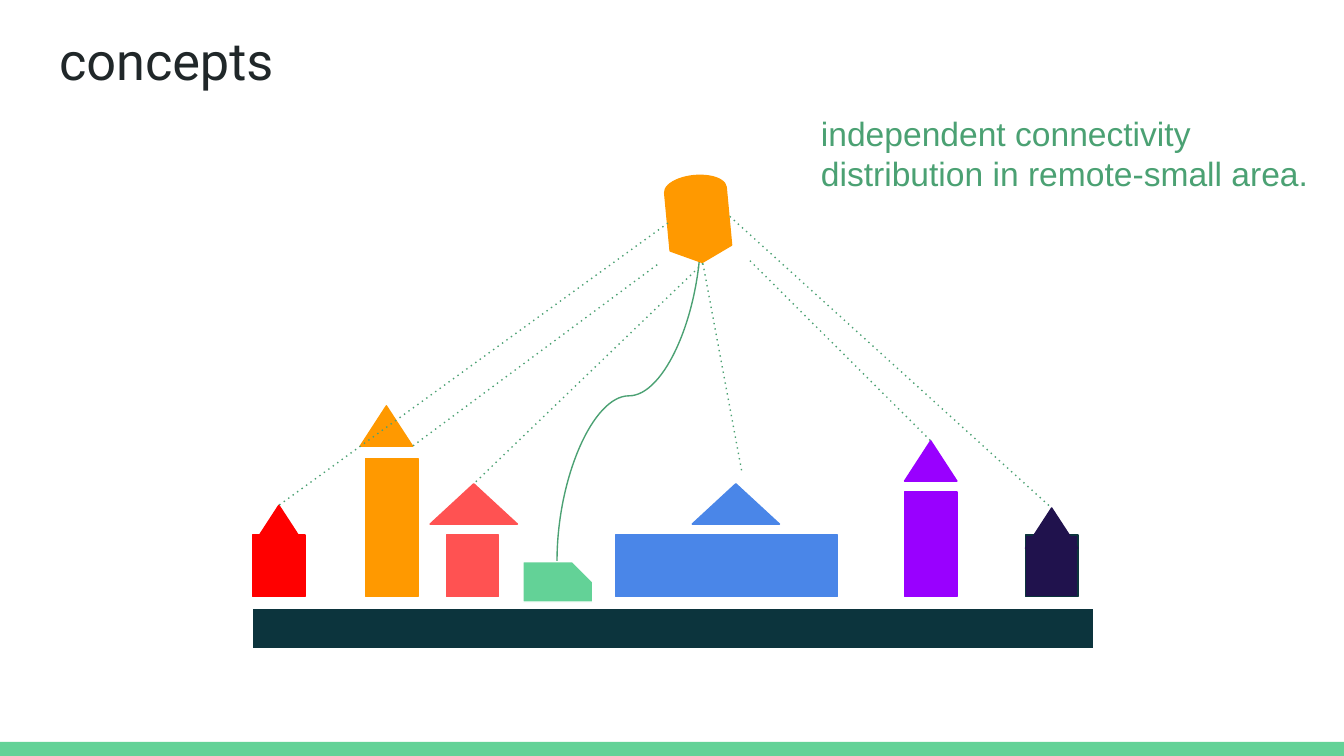
from lxml.etree import SubElement
from pptx import Presentation
from pptx.dml.color import RGBColor
from pptx.enum.shapes import MSO_CONNECTOR as LINK, MSO_SHAPE as SHAPE
from pptx.enum.text import MSO_ANCHOR, PP_ALIGN
from pptx.oxml.ns import qn
from pptx.util import Inches, Pt

WHITE = RGBColor(0xFF, 0xFF, 0xFF)
INK = RGBColor(0x20, 0x27, 0x29)
MINT = RGBColor(0x63, 0xD2, 0x97)
GREEN = RGBColor(0x4B, 0xA1, 0x73)
TEAL = RGBColor(0x0C, 0x34, 0x3D)
CORAL = RGBColor(0xFF, 0x52, 0x52)
ORANGE = RGBColor(0xFF, 0x99, 0x00)
BLUE = RGBColor(0x4A, 0x86, 0xE8)
NAVY = RGBColor(0x20, 0x12, 0x4D)
PURPLE = RGBColor(0x99, 0x00, 0xFF)
RED = RGBColor(0xFF, 0x00, 0x00)

deck = Presentation()
deck.slide_width = Inches(10)
deck.slide_height = deck.slide_width * 9 // 16
COL = deck.slide_width // 1000
ROW = COL
page = deck.slides.add_slide(deck.slide_layouts[5])


def draw(kind, left, top, width, height, fill, outline=None):
    shape = page.shapes.add_shape(kind, left * COL, top * ROW, width * COL, height * ROW)
    shape.shadow.inherit = False
    shape.fill.solid()
    shape.fill.fore_color.rgb = fill
    if outline is None:
        shape.line.fill.background()
    else:
        shape.line.color.rgb = outline
        shape.line.width = Pt(0.75)
    return shape


def link(kind, x1, y1, x2, y2):
    connector = page.shapes.add_connector(kind, x1 * COL, y1 * ROW, x2 * COL, y2 * ROW)
    connector.line.color.rgb = GREEN
    connector.line.width = Pt(0.75)
    SubElement(connector._element.spPr, qn("a:effectLst"))
    return connector


title = page.shapes.title
title.left, title.top, title.width, title.height = 34 * COL, 11 * ROW, 932 * COL, 63 * ROW
title.line.color.rgb = WHITE
title.line.width = Pt(0.75)

draw(SHAPE.RECTANGLE, 0, 552, 1000, 11, MINT)
draw(SHAPE.RECTANGLE, 188, 453, 626, 30, TEAL, WHITE)

WALL_FOOT = 444
ROOF_HEIGHT = 30
houses = (
    ("coral", CORAL, CORAL, 332, 398, 39, 320, 360, 65),
    ("orange", ORANGE, ORANGE, 272, 341, 39, 268, 302, 39),
    ("blue", BLUE, BLUE, 458, 398, 165, 515, 360, 65),
    ("navy", NAVY, TEAL, 763, 398, 39, 763, 378, 39),
    ("purple", PURPLE, PURPLE, 673, 366, 39, 673, 328, 39),
    ("red", RED, RED, 188, 398, 39, 188, 376, 39),
)
roofs = {}
for name, fill, outline, left, top, width, roof_left, roof_top, roof_width in houses:
    draw(SHAPE.RECTANGLE, left, top, width, WALL_FOOT - top, fill, outline)
    roofs[name] = draw(
        SHAPE.ISOSCELES_TRIANGLE, roof_left, roof_top, roof_width, ROOF_HEIGHT, fill, fill
    )

cable = link(LINK.CURVE, 345, 241, 591, 348)
cable._element.spPr.find(qn("a:xfrm")).set("rot", str(270 * 60000))

balloon = draw(SHAPE.FLOWCHART_DISPLAY, 487, 140, 65, 46, ORANGE, ORANGE)
balloon.rotation = 264.6

beams = (
    (497, 166, 207, 376, "red"),
    (489, 197, 307, 332, None),
    (523, 196, 352, 360, "coral"),
    (523, 196, 552, 351, None),
    (558, 194, 691, 327, "purple"),
    (543, 161, 782, 376, "navy"),
)
for x1, y1, x2, y2, target in beams:
    beam = link(LINK.STRAIGHT, x1, y1, x2, y2)
    SubElement(beam._element.spPr.find(qn("a:ln")), qn("a:prstDash")).set("val", "dot")
    if target:
        beam.end_connect(roofs[target], 0)

station = draw(SHAPE.SNIP_1_RECTANGLE, 389, 418, 52, 30, MINT, WHITE)
station.adjustments[0] = 0.5

note = page.shapes.add_textbox(601 * COL, 74 * ROW, 383 * COL, 200 * ROW)
for box, text, size, font, color in (
    (title, "concepts", 28, "Roboto", INK),
    (note, "independent connectivity distribution in remote-small area.", 18, "Arial", GREEN),
):
    frame = box.text_frame
    frame.word_wrap = True
    frame.vertical_anchor = MSO_ANCHOR.TOP
    frame.margin_left = frame.margin_right = Inches(0.1)
    frame.margin_top = frame.margin_bottom = Inches(0.1)
    para = frame.paragraphs[0]
    para.alignment = PP_ALIGN.LEFT
    span = para.add_run()
    span.text = text
    span.font.size = Pt(size)
    span.font.name = font
    span.font.color.rgb = color

deck.save("out.pptx")
